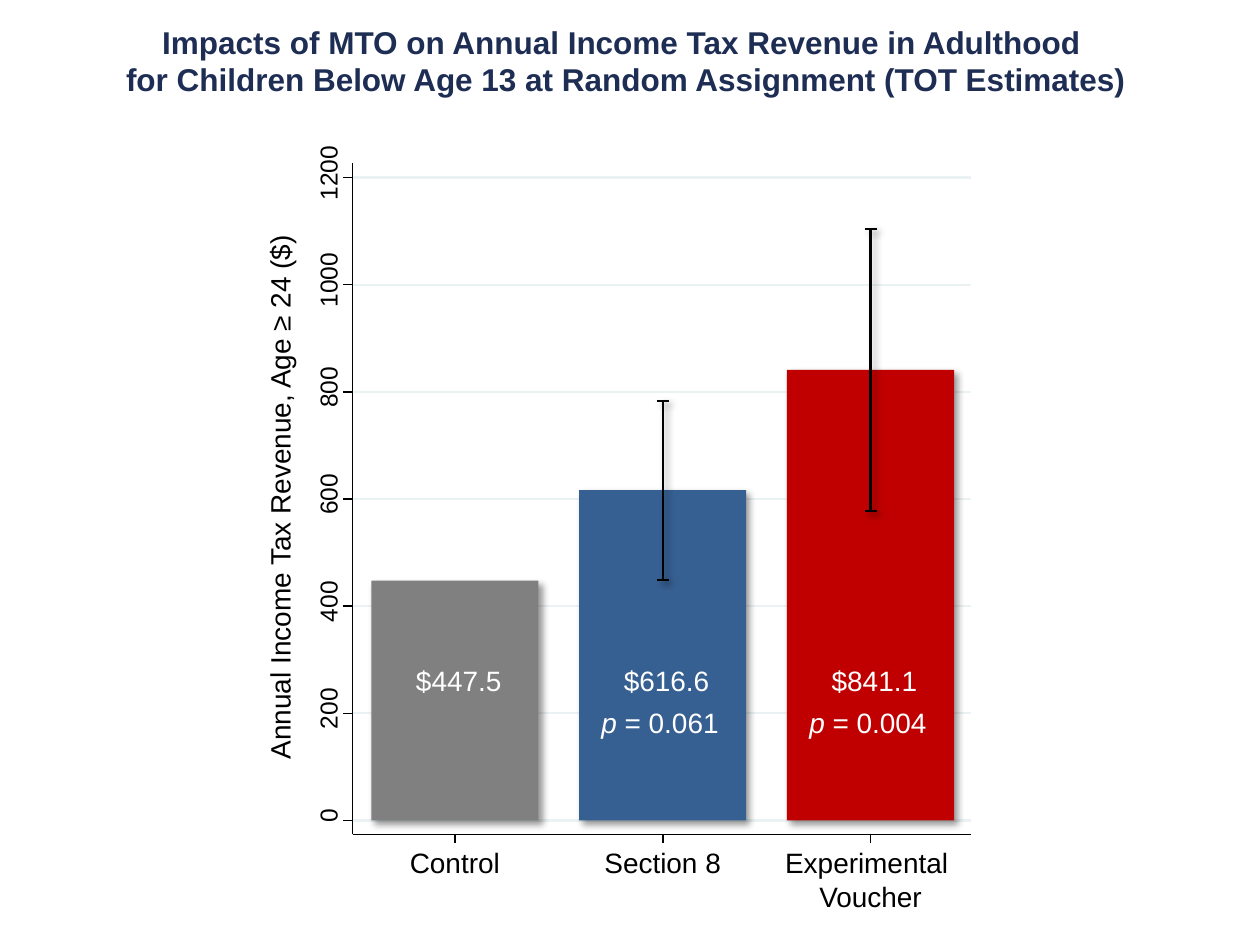
from collections import namedtuple

from lxml.etree import SubElement
from pptx import Presentation
from pptx.dml.color import RGBColor
from pptx.enum.shapes import MSO_CONNECTOR, MSO_SHAPE
from pptx.enum.text import MSO_AUTO_SIZE, PP_ALIGN
from pptx.oxml.ns import qn
from pptx.util import Cm, Pt

NAVY = RGBColor(0x1E, 0x2D, 0x53)
BLACK = RGBColor(0x00, 0x00, 0x00)
WHITE = RGBColor(0xFF, 0xFF, 0xFF)
GRID = RGBColor(0xEA, 0xF2, 0xF3)
GREY = RGBColor(0x80, 0x80, 0x80)
BLUE = RGBColor(0x37, 0x60, 0x92)
RED = RGBColor(0xC0, 0x00, 0x00)

Box = namedtuple("Box", "left top width height")
Group = namedtuple("Group", "lines label_width value margin p_value color")

GROUPS = [
    Group(["Control"], 1.83, 447.5, None, None, GREY),
    Group(["Section 8"], 2.36, 616.6, 167, "0.061", BLUE),
    Group(["Experimental ", "Voucher"], 3.48, 841.1, 263.5, "0.004", RED),
]
TICKS = range(0, 1201, 200)
CM_PER_DOLLAR = 0.0108
BASELINE = 13.26
FIRST_CENTER = 2.06
PITCH = 4.19
BAR_WIDTH = 3.37


def set_effect(shape, shadow):
    """Give the shape a soft lower-right shadow, or none at all."""
    effects = SubElement(shape._element.spPr, qn("a:effectLst"))
    if shadow:
        outer = SubElement(effects, qn("a:outerShdw"), blurRad=str(Pt(4)),
                           dist=str(Pt(3)), dir="2700000", algn="tl",
                           rotWithShape="0")
        color = SubElement(outer, qn("a:srgbClr"), val="000000")
        SubElement(color, qn("a:alpha"), val="40000")


def add_text(slide, box, paragraphs, size, color, align=PP_ALIGN.CENTER,
             bold=False, tight=False, rotation=0):
    """Add a text box whose paragraphs are lists of (text, italic) runs."""
    shape = slide.shapes.add_textbox(*map(Cm, box))
    shape.rotation = rotation
    frame = shape.text_frame
    frame.word_wrap = not tight
    frame.auto_size = MSO_AUTO_SIZE.SHAPE_TO_FIT_TEXT
    if tight:
        frame.margin_left = frame.margin_right = 0
        frame.margin_top = frame.margin_bottom = 0
    for index, spans in enumerate(paragraphs):
        para = frame.paragraphs[0] if index == 0 else frame.add_paragraph()
        para.alignment = align
        for text, italic in spans:
            span = para.add_run()
            span.text = text
            span.font.name = "Arial"
            span.font.size = Pt(size)
            span.font.bold = bold
            span.font.italic = italic
            span.font.color.rgb = color


def add_rotated_text(slide, center_x, center_y, width, height, text, size):
    """Add upward-reading text centred on a point."""
    box = Box(center_x - width / 2, center_y - height / 2, width, height)
    add_text(slide, box, [[(text, False)]], size, BLACK,
             align=PP_ALIGN.LEFT, tight=True, rotation=270)


def add_line(slide, start, end, color=BLACK, weight=0.88, shadow=False):
    """Draw a straight line between two points."""
    line = slide.shapes.add_connector(MSO_CONNECTOR.STRAIGHT,
                                      *map(Cm, (*start, *end)))
    line.line.color.rgb = color
    line.line.width = Pt(weight)
    set_effect(line, shadow)


def value_y(box, value):
    """Return the height on the slide of a dollar value."""
    return box.top + BASELINE - value * CM_PER_DOLLAR


def group_center(box, index):
    """Return the horizontal centre of a group."""
    return box.left + FIRST_CENTER + index * PITCH


def add_title(slide, box):
    """Write the two-line title."""
    lines = ["Impacts of MTO on Annual Income Tax Revenue in Adulthood ",
             "for Children Below Age 13 at Random Assignment (TOT Estimates)"]
    add_text(slide, box, [[(line, False)] for line in lines], 18, NAVY, bold=True)


def add_scale_labels(slide, box):
    """Write the axis title and the dollar labels left of the plot."""
    for tick in TICKS:
        add_rotated_text(slide, box.left - 0.49, value_y(box, tick) - 0.1,
                         0.28 * len(str(tick)), 0.61, str(tick), 14)
    add_rotated_text(slide, box.left - 1.47, box.top + 6.56, 11.18, 0.69,
                     " Annual Income Tax Revenue, Age ≥ 24 ($)", 16)


def add_gridlines(slide, box):
    """Draw one pale line across the plot for each tick."""
    for tick in TICKS:
        y = value_y(box, tick)
        add_line(slide, (box.left, y), (box.left + box.width, y), GRID, 1.25)


def add_bars(slide, box):
    """Draw the bar of each group."""
    for index, group in enumerate(GROUPS):
        top = value_y(box, group.value)
        bar_box = Box(group_center(box, index) - BAR_WIDTH / 2, top,
                      BAR_WIDTH, box.top + BASELINE - top)
        bar = slide.shapes.add_shape(MSO_SHAPE.RECTANGLE, *map(Cm, bar_box))
        bar.fill.solid()
        bar.fill.fore_color.rgb = group.color
        bar.line.fill.background()
        set_effect(bar, True)


def add_error_bars(slide, box):
    """Draw the capped interval of each group that has one."""
    for index, group in enumerate(GROUPS):
        if group.margin is None:
            continue
        x = group_center(box, index)
        low = value_y(box, group.value - group.margin)
        high = value_y(box, group.value + group.margin)
        add_line(slide, (x, high), (x, low), weight=1.25, shadow=True)
        for y in (low, high):
            add_line(slide, (x - 0.12, y), (x + 0.12, y), weight=1.25, shadow=True)


def add_axes(slide, box):
    """Draw both axes with their tick marks."""
    bottom = box.top + box.height
    add_line(slide, (box.left, bottom), (box.left, box.top))
    for tick in TICKS:
        y = value_y(box, tick)
        add_line(slide, (box.left, y), (box.left - 0.2, y))
    add_line(slide, (box.left, bottom), (box.left + box.width, bottom))
    for index in range(len(GROUPS)):
        x = group_center(box, index)
        add_line(slide, (x, bottom), (x, bottom + 0.18))


def add_group_labels(slide, box):
    """Write the estimates inside the bars and the names below them."""
    for index, group in enumerate(GROUPS):
        center = group_center(box, index)
        left = center - BAR_WIDTH / 2
        add_text(slide, Box(left, box.top + 9.98, BAR_WIDTH, 0.94),
                 [[(f" ${group.value}", False)]], 16, WHITE)
        if group.p_value:
            add_text(slide, Box(left + 0.2, box.top + 10.82, 3.81, 0.94),
                     [[("p", True), (f" = {group.p_value}", False)]],
                     16, WHITE, align=PP_ALIGN.LEFT)
        name_box = Box(center - group.label_width / 2, box.top + 13.77,
                       group.label_width, 0.69 * len(group.lines))
        add_text(slide, name_box, [[(line, False)] for line in group.lines],
                 16, BLACK, tight=True)


def main():
    """Build and save the deck."""
    deck = Presentation()
    deck.slide_width, deck.slide_height = Cm(25.4), Cm(19.05)
    slide = deck.slides.add_slide(deck.slide_layouts[6])
    plot = Box(7.11, 3.28, 12.47, 13.54)
    add_title(slide, Box(-0.08, 0.33, 25.4, 1.8))
    for add_part in (add_scale_labels, add_gridlines, add_bars,
                     add_error_bars, add_axes, add_group_labels):
        add_part(slide, plot)
    deck.save("out.pptx")


if __name__ == "__main__":
    main()
